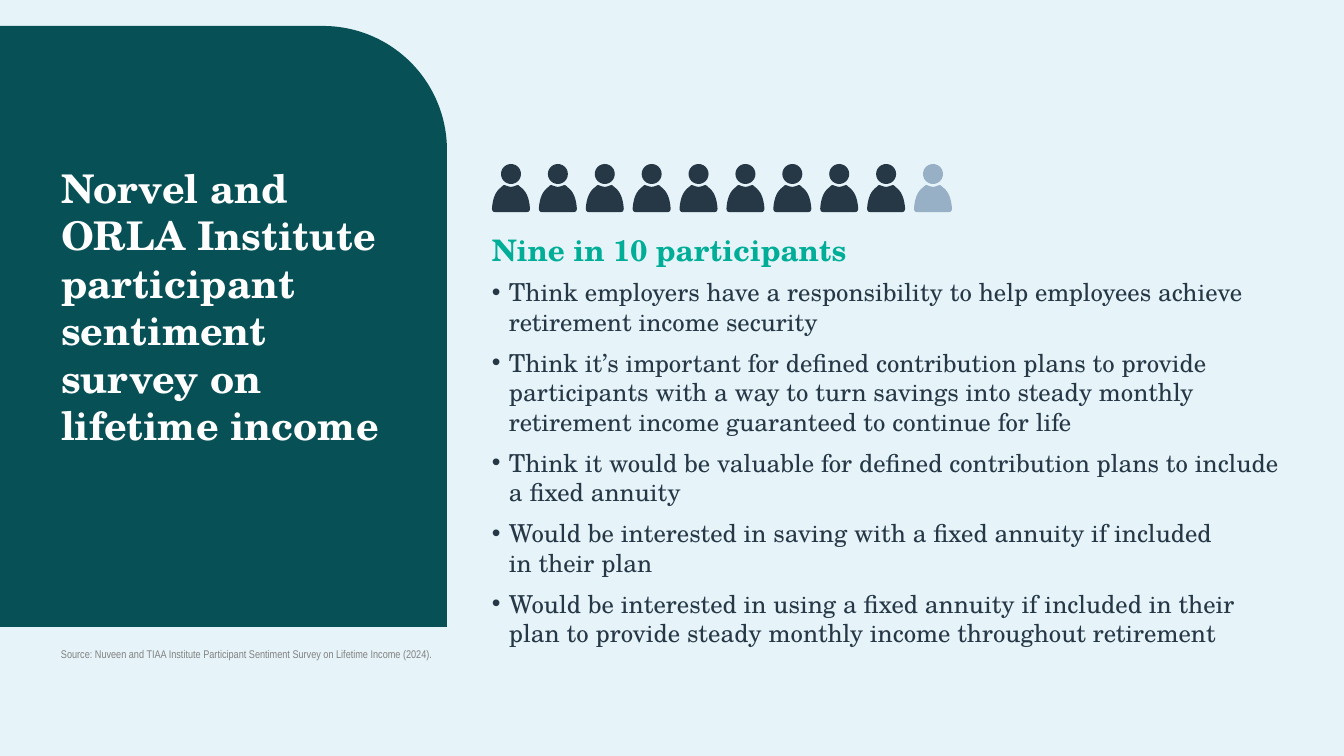
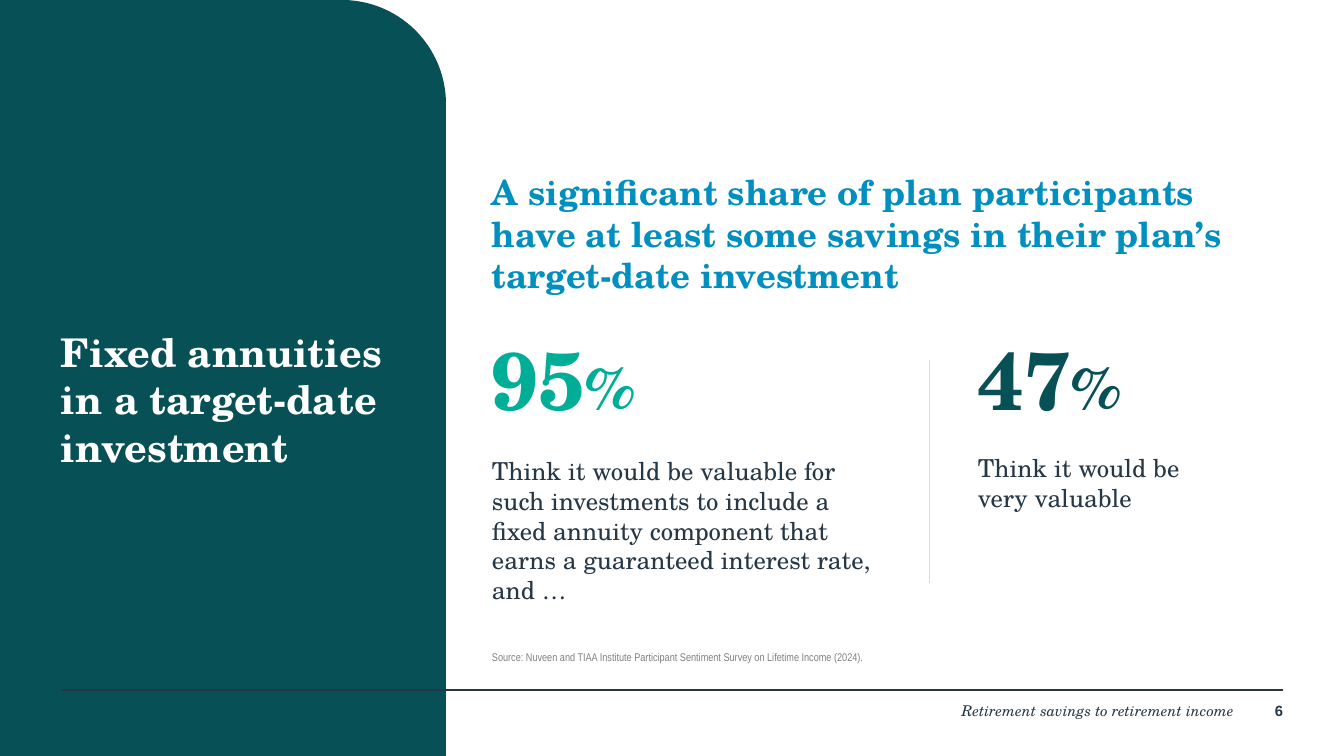
from dataclasses import dataclass
from typing import NamedTuple

from lxml import etree
from pptx import Presentation
from pptx import util as u
from pptx.dml.color import RGBColor
from pptx.enum import shapes, text
from pptx.oxml import ns

EMU_PER_PX = 10280
WIDTH, HEIGHT = 1344, 756


@dataclass(frozen=True)
class Theme:
    serif: str = "TeX Gyre Schola"
    sans: str = "Arial"
    narrow: str = "Arial Narrow"
    white: str = "FFFFFF"
    sky: str = "E6F4F9"
    pine: str = "075156"
    ink: str = "263746"
    teal: str = "00AD97"
    blue: str = "008FBE"
    mist: str = "97B0C6"
    grey: str = "808080"
    rule: str = "D9D9D9"
    title: int = 32
    headline: int = 28
    subhead: int = 24
    body: int = 20
    figure: int = 66
    percent: int = 48
    footer: int = 12
    source: int = 9


THEME = Theme()
SOURCE = ("Source: Nuveen and TIAA Institute Participant Sentiment Survey "
          "on Lifetime Income (2024).")


class Box(NamedTuple):
    left: int
    top: int
    width: int
    height: int

    def inner(self, left, top, width, height):
        """Return a box placed relative to this one."""
        return Box(self.left + left, self.top + top, width, height)

    def emu(self):
        return [px(length) for length in self]


def px(length):
    return u.Emu(round(length * EMU_PER_PX))


def rgb(color):
    return RGBColor.from_string(color)


def paint(shape, color):
    shape.shadow.inherit = False
    shape.fill.solid()
    shape.fill.fore_color.rgb = rgb(color)
    shape.line.fill.background()


def add_shape(page, kind, box, color):
    shape = page.shapes.add_shape(kind, *box.emu())
    paint(shape, color)
    return shape


def add_line(page, start, end, color, weight):
    line = page.shapes.add_connector(
        shapes.MSO_CONNECTOR.STRAIGHT, *map(px, start + end))
    line.line.color.rgb = rgb(color)
    line.line.width = u.Pt(weight)
    etree.SubElement(line._element.spPr, ns.qn("a:effectLst"))


def add_bullet(para, indent=17):
    properties = para._p.get_or_add_pPr()
    properties.set("marL", str(px(indent)))
    properties.set("indent", str(-px(indent)))
    etree.SubElement(properties, ns.qn("a:buFont"), typeface=THEME.sans)
    etree.SubElement(properties, ns.qn("a:buChar"), char="•")


def add_span(para, words, size, color, font, bold, italic):
    """Add a run, turning each newline into a line break."""
    for number, line in enumerate(words.split("\n")):
        if number:
            para.add_line_break()
        span = para.add_run()
        span.text = line
        span.font.size = u.Pt(size)
        span.font.color.rgb = rgb(color)
        span.font.name = font
        span.font.bold = bold
        span.font.italic = italic


def add_text(page, box, *paragraphs, size=THEME.body, color=THEME.ink,
             font=THEME.serif, bold=False, italic=False, bullets=False,
             align=text.PP_ALIGN.LEFT, anchor=text.MSO_ANCHOR.TOP,
             before=0, after=0, suffix="", suffix_size=None):
    frame = page.shapes.add_textbox(*box.emu()).text_frame
    frame.word_wrap = True
    frame.vertical_anchor = anchor
    frame.margin_left = frame.margin_right = 0
    frame.margin_top = frame.margin_bottom = 0
    for number, words in enumerate(paragraphs):
        para = frame.add_paragraph() if number else frame.paragraphs[0]
        if bullets:
            add_bullet(para)
        para.alignment = align
        if number:
            para.space_before = u.Pt(before)
        para.space_after = u.Pt(after)
        add_span(para, words, size, color, font, bold, italic)
        if suffix:
            add_span(para, suffix, suffix_size, color, font, bold, italic)


def curve(start, first, second, end, steps=8):
    """Sample a cubic curve, leaving out its start."""
    points = []
    for step in range(1, steps + 1):
        t = step / steps
        weights = ((1 - t) ** 3, 3 * t * (1 - t) ** 2,
                   3 * t * t * (1 - t), t ** 3)
        points.append(tuple(
            sum(w * c for w, c in zip(weights, axis))
            for axis in zip(start, first, second, end)))
    return points


def shoulders():
    """Outline of a person's body on a 43 by 30 grid."""
    start = (32, 2)
    segments = [
        ((31, 1), (30, 0), (29, 0)), ((26, 1), (24, 2), (21.5, 2)),
        ((19, 2), (17, 1), (14, 0)), ((13, 0), (12, 1), (11, 2)),
        ((4, 7), (1, 14), (0, 26)), ((0, 28), (1, 30), (3, 30)),
        ((3, 30), (40, 30), (40, 30)), ((42, 30), (43, 28), (43, 26)),
        ((42, 14), (39, 7), (32, 2)),
    ]
    points = [start]
    for segment in segments:
        points += curve(points[-1], *segment)
    return points


def add_person(page, box, color):
    head = 20
    add_shape(page, shapes.MSO_SHAPE.OVAL,
              box.inner((box.width - head) / 2, 0, head, head), color)
    body = box.inner(0, head + 1, box.width, box.height - head - 1)
    points = [(px(body.left + x * body.width / 43),
               px(body.top + y * body.height / 30)) for x, y in shoulders()]
    builder = page.shapes.build_freeform(*points[0])
    builder.add_line_segments(points[1:], close=True)
    paint(builder.convert_to_shape(), color)


def add_people(page, box, count, active):
    width = 38
    pitch = (box.width - width) / (count - 1)
    for number in range(count):
        color = THEME.ink if number < active else THEME.mist
        add_person(page, box.inner(number * pitch, 0, width, box.height), color)


def add_title_panel(page, box, title, title_top, title_width, radius):
    panel = add_shape(page, shapes.MSO_SHAPE.ROUND_1_RECTANGLE, box, THEME.pine)
    panel.adjustments[0] = radius / min(box.width, box.height)
    add_text(page, box.inner(61, title_top, title_width, 304), title,
             size=THEME.title, color=THEME.white, bold=True)


def add_source(page, box):
    add_text(page, box, SOURCE, size=THEME.source, color=THEME.grey,
             font=THEME.narrow, anchor=text.MSO_ANCHOR.BOTTOM)


def add_footer(page, box, number):
    add_line(page, (box.left, box.top), (box.left + box.width, box.top),
             THEME.ink, 2)
    right = text.PP_ALIGN.RIGHT
    add_text(page, box.inner(412, 12, 761, 36),
             "Retirement savings to retirement income",
             size=THEME.footer, italic=True, align=right)
    add_text(page, box.inner(box.width - 36, 12, 36, 30), str(number),
             size=THEME.footer, font=THEME.sans, bold=True, align=right)


def add_findings(page, box, heading, findings):
    add_people(page, box.inner(0, 0, 460, 48), count=10, active=9)
    add_text(page, box.inner(0, 68, 572, 36), heading,
             size=THEME.subhead, color=THEME.teal, bold=True)
    add_text(page, box.inner(0, 113, box.width, 374), *findings,
             bullets=True, before=3, after=6)


def add_statistic(page, box, figure, color, caption, caption_top):
    add_text(page, box.inner(0, 0, 196, 71), figure, size=THEME.figure,
             color=color, bold=True, suffix="%", suffix_size=THEME.percent)
    add_text(page, box.inner(0, caption_top, box.width, 71), caption)


def survey_page(page):
    page.background.fill.solid()
    page.background.fill.fore_color.rgb = rgb(THEME.sky)
    add_title_panel(
        page, Box(0, 26, 447, 601),
        "Norvel and\nORLA Institute participant sentiment\n"
        "survey on lifetime income",
        title_top=138, title_width=348, radius=124)
    add_source(page, Box(61, 648, 792, 13))
    add_findings(page, Box(492, 164, 792, 488), "Nine in 10 participants", [
        "Think employers have a responsibility to help employees achieve "
        "retirement income security",
        "Think it’s important for defined contribution plans to provide "
        "participants with a way to turn savings into steady monthly "
        "retirement income guaranteed to continue for life",
        "Think it would be valuable for defined contribution plans to "
        "include a fixed annuity",
        "Would be interested in saving with a fixed annuity if included\n"
        "in their plan",
        "Would be interested in using a fixed annuity if included in their "
        "plan to provide steady monthly income throughout retirement",
    ])


def annuity_page(page):
    add_title_panel(
        page, Box(0, 0, 446, HEIGHT),
        "Fixed annuities\nin a target-date investment",
        title_top=328, title_width=381, radius=104)
    add_text(page, Box(492, 171, 791, 124),
             "A significant share of plan participants\n"
             "have at least some savings in their plan’s\n"
             "target-date investment",
             size=THEME.headline, color=THEME.blue, bold=True)
    add_statistic(page, Box(492, 329, 387, 275), "95", THEME.teal,
                  "Think it would be valuable for such investments to include "
                  "a fixed annuity component that earns a guaranteed interest "
                  "rate, and …", caption_top=127)
    add_statistic(page, Box(978, 329, 286, 275), "47", THEME.pine,
                  "Think it would be\nvery valuable", caption_top=124)
    add_line(page, (929, 360), (929, 583), THEME.rule, 0.75)
    add_source(page, Box(492, 646, 819, 18))
    add_footer(page, Box(61, 690, 1222, 48), 6)


def main():
    deck = Presentation()
    deck.slide_width, deck.slide_height = px(WIDTH), px(HEIGHT)
    for build in (survey_page, annuity_page):
        build(deck.slides.add_slide(deck.slide_layouts[6]))
    deck.save("out.pptx")


if __name__ == "__main__":
    main()
